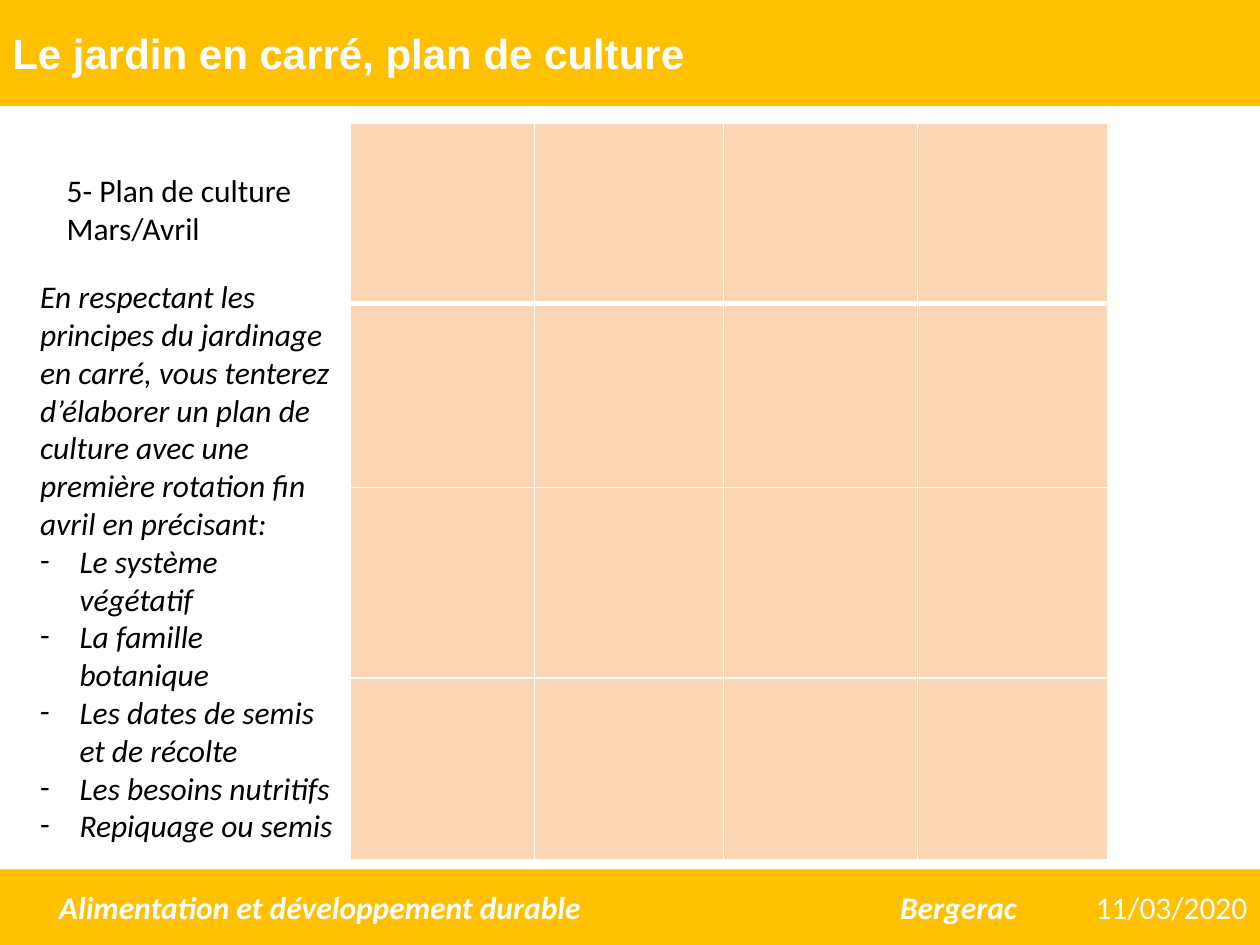
from dataclasses import dataclass

from lxml import etree
from pptx import Presentation
from pptx.dml.color import RGBColor
from pptx.enum import shapes, text
from pptx.oxml import ns
from pptx.util import Pt


@dataclass
class Theme:
    gold: str = "FFC000"
    peach: str = "FCD5B5"
    white: str = "FFFFFF"
    black: str = "000000"
    head: int = 24
    body: int = 18


look = Theme()
tint = RGBColor.from_string
left, right = text.PP_ALIGN.LEFT, text.PP_ALIGN.RIGHT
middle, top = text.MSO_ANCHOR.MIDDLE, text.MSO_ANCHOR.TOP


def write(shape, words, color, anchor=top, align=left, size=look.body,
          face="Calibri", bold=False, slant=False):
    frame = shape.text_frame
    frame.text = words
    frame.word_wrap = True
    frame.vertical_anchor = anchor
    for para in frame.paragraphs:
        para.alignment = align
        for run in para.runs:
            font = run.font
            font.name, font.size = face, Pt(size)
            font.bold, font.italic = bold, slant
            font.color.rgb = tint(color)
    return frame


def add(parent, tag, **attrs):
    return etree.SubElement(parent, ns.qn(tag), attrs)


deck = Presentation()
deck.slide_width, deck.slide_height = Pt(720), Pt(540)
slide = deck.slides.add_slide(deck.slide_layouts[6])
items = slide.shapes

bars = []
for y, high in ((0, 60.5), (496.8, 43.2)):
    bar = items.add_shape(shapes.MSO_SHAPE.RECTANGLE, 0, Pt(y), Pt(720), Pt(high))
    bar.shadow.inherit = False
    bar.fill.solid()
    bar.fill.fore_color.rgb = tint(look.gold)
    bar.line.fill.background()
    bars.append(bar)
write(bars[0], "Le jardin en carré, plan de culture", look.white, middle,
      size=look.head, face="Arial", bold=True)
write(bars[1], "11/03/2020", look.white, middle, right)

foot = items.add_textbox(Pt(15.84), Pt(504), Pt(587.5), Pt(29))
frame = write(foot, "Alimentation et développement durable\tBergerac",
              look.white, middle, bold=True, slant=True)
frame.margin_left = Pt(17.9)
tabs = add(frame.paragraphs[0]._p.get_or_add_pPr(), "a:tabLst")
add(tabs, "a:tab", pos=str(Pt(480.6)), algn="l")

label = items.add_textbox(Pt(31), Pt(94.3), Pt(149), Pt(51))
write(label, "5- Plan de culture\nMars/Avril", look.black).word_wrap = False

cols = (105.1, 108, 110.9, 108.7)
rows = (103, 105.1, 108.7, 103.7)
table = items.add_table(len(rows), len(cols), Pt(200.2), Pt(70.6),
                        Pt(sum(cols)), Pt(sum(rows))).table
table.first_row = table.horz_banding = False
for col, wide in zip(table.columns, cols):
    col.width = Pt(wide)
for r, (row, high) in enumerate(zip(table.rows, rows)):
    row.height = Pt(high)
    for cell in row.cells:
        props = cell._tc.get_or_add_tcPr()
        for side in "LRTB":
            thick = 3 if (r, side) in ((0, "B"), (1, "T")) else 1
            edge = add(props, f"a:ln{side}", w=str(Pt(thick)))
            add(add(edge, "a:solidFill"), "a:srgbClr", val=look.white)
        cell.fill.solid()
        cell.fill.fore_color.rgb = tint(look.peach)

tasks = (
    "En respectant les principes du jardinage en carré, vous tenterez "
    "d’élaborer un plan de culture avec une première rotation fin avril "
    "en précisant:",
    "Le système végétatif",
    "La famille botanique",
    "Les dates de semis et de récolte",
    "Les besoins nutritifs",
    "Repiquage ou semis",
)
brief = items.add_textbox(Pt(15.84), Pt(154.8), Pt(183.6), Pt(334))
frame = write(brief, "\n".join(tasks), look.black, slant=True)
for para in frame.paragraphs[1:]:
    props = para._p.get_or_add_pPr()
    props.set("marL", str(Pt(22.5)))
    props.set("indent", str(Pt(-22.5)))
    add(props, "a:buFont", typeface="Calibri")
    add(props, "a:buChar", char="-")

deck.save("out.pptx")
